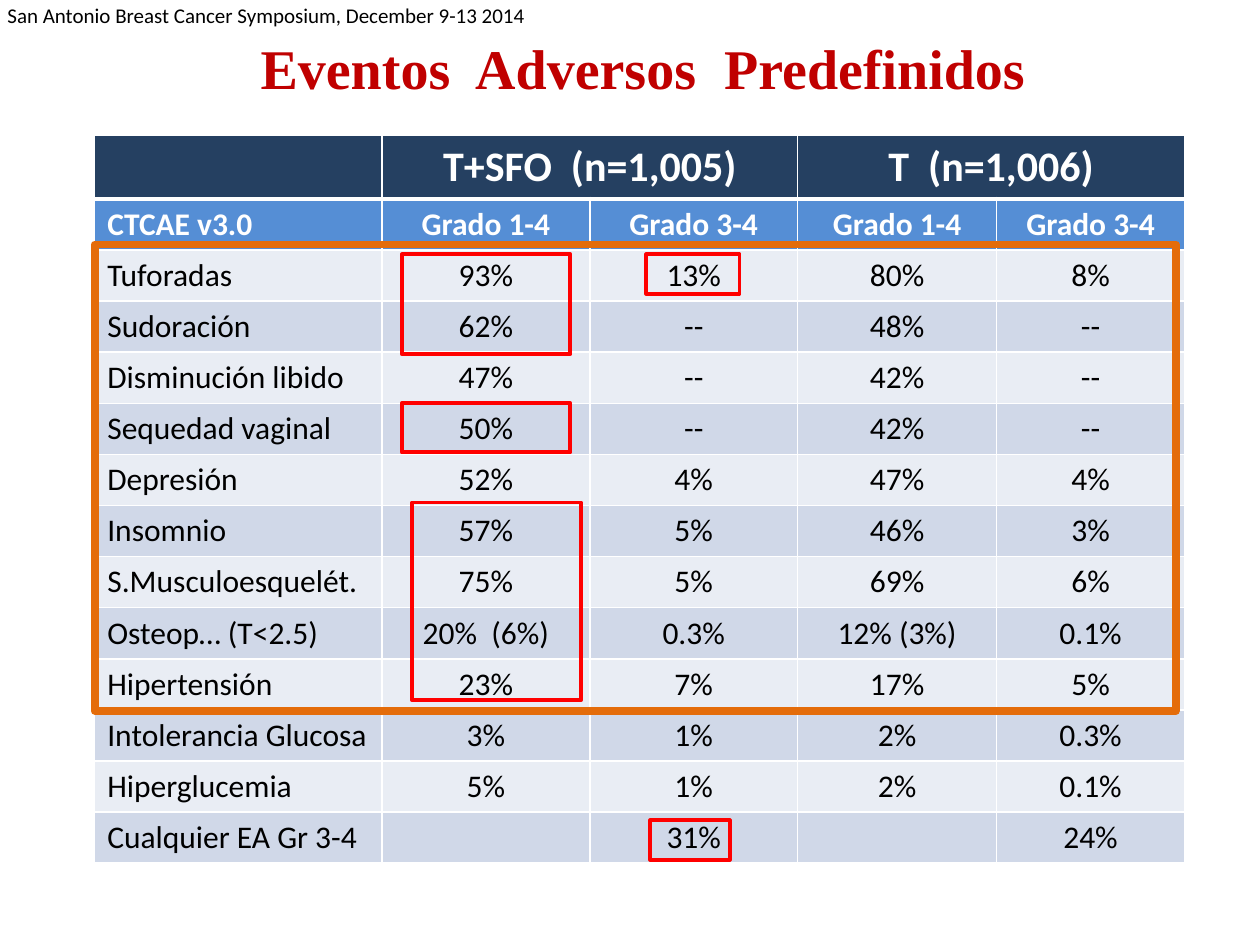
import pptx
import pptx.dml.color
import pptx.enum.shapes
import pptx.enum.text
import pptx.oxml
import pptx.oxml.ns
import pptx.util
from pptx.util import Cm

COLORS = {
    "navy": "254061",
    "blue": "558ED5",
    "pale": "E9EDF4",
    "band": "D0D8E8",
    "white": "FFFFFF",
    "black": "000000",
    "title": "C00000",
    "red": "FF0000",
    "orange": "E46C0A",
}

COLUMN_WIDTHS = [5.79, 4.19, 4.19, 4.01, 3.79]
GROUP_HEIGHT = 1.29
ROW_HEIGHT = 1.03

ROWS = [
    ["", "T+SFO  (n=1,005)", "", "T  (n=1,006)", ""],
    ["CTCAE v3.0", "Grado 1-4", "Grado 3-4", "Grado 1-4", "Grado 3-4"],
    ["Tuforadas", "93%", "13%", "80%", "8%"],
    ["Sudoración", "62%", "--", "48%", "--"],
    ["Disminución libido", "47%", "--", "42%", "--"],
    ["Sequedad vaginal", "50%", "--", "42%", "--"],
    ["Depresión", "52%", "4%", "47%", "4%"],
    ["Insomnio", "57%", "5%", "46%", "3%"],
    ["S.Musculoesquelét.", "75%", "5%", "69%", "6%"],
    ["Osteop… (T<2.5)", "20%  (6%)", "0.3%", "12% (3%)", "0.1%"],
    ["Hipertensión", "23%", "7%", "17%", "5%"],
    ["Intolerancia Glucosa", "3%", "1%", "2%", "0.3%"],
    ["Hiperglucemia", "5%", "1%", "2%", "0.1%"],
    ["Cualquier EA Gr 3-4", "", "31%", "", "24%"],
]

FRAMES = [
    (8.1, 5.13, 3.4, 2.01, "red", 2.25),
    (13.03, 5.13, 1.88, 0.79, "red", 2.25),
    (1.91, 4.93, 21.79, 9.4, "orange", 4.5),
    (13.11, 16.54, 1.6, 0.79, "red", 2.25),
    (8.1, 8.13, 3.4, 0.99, "red", 2.25),
    (8.31, 10.13, 3.4, 3.99, "red", 2.25),
]


def rgb(name):
    return pptx.dml.color.RGBColor.from_string(COLORS[name])


def format_paragraph(para, size, color, bold=False, name="Calibri"):
    para.font.size = pptx.util.Pt(size)
    para.font.bold = bold
    para.font.name = name
    para.font.color.rgb = rgb(color)


def add_title(page, text):
    title = page.shapes.title
    title.left, title.top, title.width, title.height = Cm(5), Cm(0.53), Cm(16.08), Cm(1.63)
    title.text_frame.text = text
    title.text_frame.word_wrap = False
    para = title.text_frame.paragraphs[0]
    para.alignment = pptx.enum.text.PP_ALIGN.LEFT
    format_paragraph(para, 32, "title", True, "Times New Roman")


def add_source(page, text):
    box = page.shapes.add_textbox(Cm(-0.1), Cm(-0.08), Cm(11.02), Cm(0.76))
    box.text_frame.text = text
    box.text_frame.word_wrap = False
    format_paragraph(box.text_frame.paragraphs[0], 12, "black")


def add_borders(cell, bottom):
    properties = cell._tc.get_or_add_tcPr()
    for side, width in (("L", 1), ("R", 1), ("T", 1), ("B", bottom)):
        properties.append(pptx.oxml.parse_xml(
            f'<a:ln{side} {pptx.oxml.ns.nsdecls("a")} w="{pptx.util.Pt(width)}">'
            f'<a:solidFill><a:srgbClr val="{COLORS["white"]}"/></a:solidFill></a:ln{side}>'
        ))


def row_style(row):
    if row == 0:
        return "navy", "white", 24, True
    if row == 1:
        return "blue", "white", 18, True
    return ("band" if row % 2 else "pale"), "black", 18, False


def fill_cell(cell, text, row, column):
    fill, color, size, bold = row_style(row)
    add_borders(cell, 3 if row == 0 else 1)
    cell.fill.solid()
    cell.fill.fore_color.rgb = rgb(fill)
    cell.vertical_anchor = pptx.enum.text.MSO_ANCHOR.MIDDLE
    if text:
        cell.text = text
        para = cell.text_frame.paragraphs[0]
        align = pptx.enum.text.PP_ALIGN
        para.alignment = align.CENTER if column else align.LEFT
        format_paragraph(para, size, color, bold)


def add_events_table(page):
    height = GROUP_HEIGHT + ROW_HEIGHT * (len(ROWS) - 1)
    table = page.shapes.add_table(
        len(ROWS), len(COLUMN_WIDTHS), Cm(1.91), Cm(2.72), Cm(sum(COLUMN_WIDTHS)), Cm(height)
    ).table
    for column, width in zip(table.columns, COLUMN_WIDTHS):
        column.width = Cm(width)
    for row, texts in enumerate(ROWS):
        table.rows[row].height = Cm(ROW_HEIGHT if row else GROUP_HEIGHT)
        for column, text in enumerate(texts):
            fill_cell(table.cell(row, column), text, row, column)
    for column in (1, 3):
        table.cell(0, column).merge(table.cell(0, column + 1))


def add_frame(page, left, top, width, height, color, weight):
    frame = page.shapes.add_shape(
        pptx.enum.shapes.MSO_SHAPE.RECTANGLE, Cm(left), Cm(top), Cm(width), Cm(height)
    )
    frame.shadow.inherit = False
    frame.fill.background()
    frame.line.color.rgb = rgb(color)
    frame.line.width = pptx.util.Pt(weight)


def main():
    deck = pptx.Presentation()
    deck.slide_width, deck.slide_height = Cm(25.4), Cm(19.05)
    page = deck.slides.add_slide(deck.slide_layouts.get_by_name("Title Only"))
    add_events_table(page)
    add_title(page, "Eventos  Adversos  Predefinidos")
    add_source(page, "San Antonio Breast Cancer Symposium, December 9-13 2014")
    for frame in FRAMES:
        add_frame(page, *frame)
    deck.save("out.pptx")


if __name__ == "__main__":
    main()
